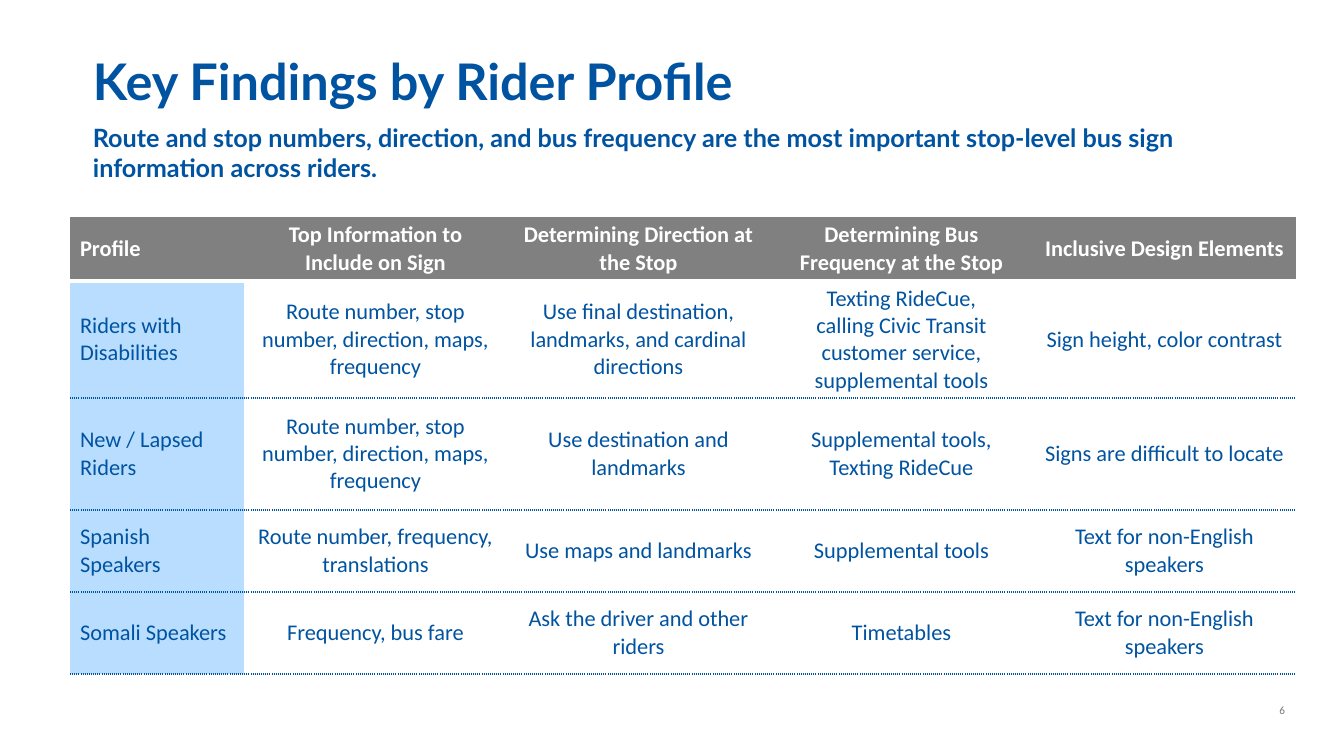
import lxml.etree
import pptx
import pptx.dml.color
import pptx.enum.text
import pptx.oxml.ns
import pptx.util

PX = 914400 / 100.8
COLORS = {"blue": "0053A0", "gray": "808080", "pale": "B9DDFF",
          "white": "FFFFFF", "number": "77787B"}
NO_STYLE = "{2D5ABB26-0587-4C30-8999-92F81FD0307C}"
ALIGN = pptx.enum.text.PP_ALIGN
MIDDLE = pptx.enum.text.MSO_ANCHOR.MIDDLE

COLUMN_WIDTHS = [174, 263, 263, 263, 263]
ROW_HEIGHTS = [64, 117, 112, 82, 82]
FINDINGS = [
    ["Profile", "Top Information to Include on Sign",
     "Determining Direction at the Stop",
     "Determining Bus Frequency at the Stop", "Inclusive Design Elements"],
    ["Riders with Disabilities",
     "Route number, stop number, direction, maps, frequency",
     "Use final destination, landmarks, and cardinal directions",
     "Texting RideCue,\ncalling Civic Transit customer service,\nsupplemental tools",
     "Sign height, color contrast"],
    ["New / Lapsed Riders",
     "Route number, stop number, direction, maps, frequency",
     "Use destination and landmarks",
     "Supplemental tools,\nTexting RideCue", "Signs are difficult to locate"],
    ["Spanish Speakers", "Route number, frequency, translations",
     "Use maps and landmarks", "Supplemental tools",
     "Text for non-English speakers"],
    ["Somali Speakers", "Frequency, bus fare",
     "Ask the driver and other riders", "Timetables",
     "Text for non-English speakers"],
]


def px(length):
    return pptx.util.Emu(round(length * PX))


def rgb(name):
    return pptx.dml.color.RGBColor.from_string(COLORS[name])


def write(frame, text, size, font, color, bold=False, align=ALIGN.LEFT):
    frame.word_wrap = True
    frame.text = text
    for paragraph in frame.paragraphs:
        paragraph.alignment = align
        paragraph.font.size = pptx.util.Pt(size)
        paragraph.font.name = font
        paragraph.font.bold = bold
        paragraph.font.color.rgb = rgb(color)


def add_border(cell, side, color, points, dash="solid"):
    """Draw one edge of a cell; call before the cell is filled."""
    properties = cell._tc.get_or_add_tcPr()
    qn = pptx.oxml.ns.qn
    line = lxml.etree.SubElement(properties, qn(f"a:ln{side}"),
                                 w=str(pptx.util.Pt(points)))
    fill = lxml.etree.SubElement(line, qn("a:solidFill"))
    lxml.etree.SubElement(fill, qn("a:srgbClr"), val=COLORS[color])
    lxml.etree.SubElement(line, qn("a:prstDash"), val=dash)


def add_heading(slide, left, top, width):
    title = slide.shapes.title
    title.left, title.top = px(left), px(top)
    title.width, title.height = px(width), px(66)
    frame = title.text_frame
    write(frame, "Key Findings by Rider Profile", 36, "Lato", "blue", True)
    frame.margin_left = frame.margin_right = 0
    frame.vertical_anchor = MIDDLE
    frame.paragraphs[0].line_spacing = 0.9

    summary = slide.shapes.add_textbox(px(left - 10), px(top + 66),
                                       px(width + 20), px(72))
    write(summary.text_frame,
          "Route and stop numbers, direction, and bus frequency are the most "
          "important stop-level bus sign information across riders.",
          18, "Lato", "blue", True)


def format_cell(cell, text, row, column):
    is_header, is_profile = row == 0, column == 0
    write(cell.text_frame, text, 16, "Calibri",
          "white" if is_header else "blue", is_header,
          ALIGN.LEFT if is_profile else ALIGN.CENTER)
    cell.vertical_anchor = MIDDLE
    cell.margin_top = cell.margin_bottom = px(3)
    if row == 1:
        add_border(cell, "T", "white", 3)
    elif row > 1:
        add_border(cell, "T", "blue", 1, "sysDot")
    if is_header:
        add_border(cell, "B", "white", 3)
    else:
        add_border(cell, "B", "blue", 1, "sysDot")
    if is_header or is_profile:
        cell.fill.solid()
        cell.fill.fore_color.rgb = rgb("gray" if is_header else "pale")
    else:
        cell.fill.background()


def add_findings(slide, left, top):
    table = slide.shapes.add_table(
        len(ROW_HEIGHTS), len(COLUMN_WIDTHS), px(left), px(top),
        px(sum(COLUMN_WIDTHS)), px(sum(ROW_HEIGHTS))).table
    table.horz_banding = False
    table._tbl.tblPr.find(pptx.oxml.ns.qn("a:tableStyleId")).text = NO_STYLE
    for column, width in zip(table.columns, COLUMN_WIDTHS):
        column.width = px(width)
    for row, height in zip(table.rows, ROW_HEIGHTS):
        row.height = px(height)
    for row, texts in enumerate(FINDINGS):
        for column, text in enumerate(texts):
            format_cell(table.cell(row, column), text, row, column)


def add_page_number(slide, left, top, width, height):
    number = slide.shapes.add_textbox(px(left), px(top), px(width), px(height))
    write(number.text_frame, "6", 8, "Calibri", "number", align=ALIGN.RIGHT)


def main():
    deck = pptx.Presentation()
    deck.slide_width, deck.slide_height = px(1344), px(756)
    slide = deck.slides.add_slide(deck.slide_layouts.get_by_name("Title Only"))
    add_heading(slide, 93, 51, 1159)
    add_findings(slide, 70, 217)
    add_page_number(slide, 993, 698, 302, 40)
    deck.save("out.pptx")


if __name__ == "__main__":
    main()
